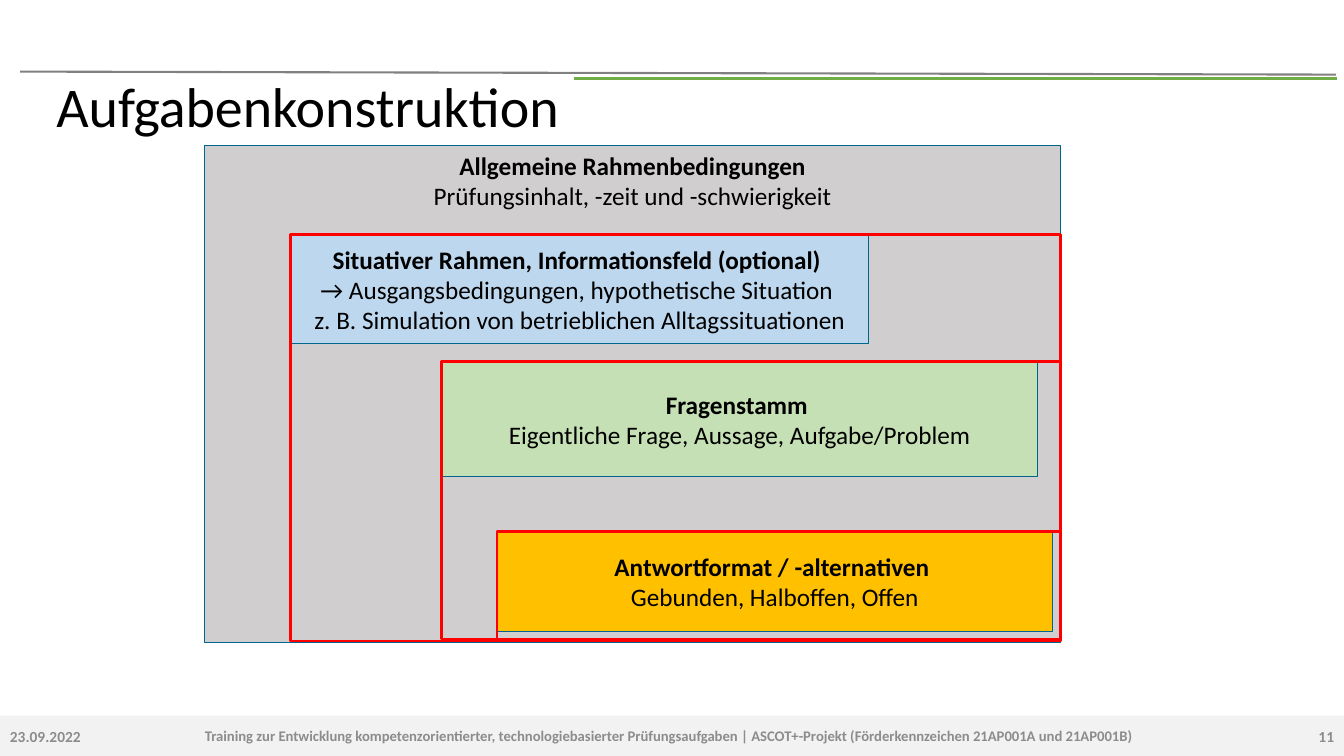
import pptx
import pptx.util
import pptx.dml.color
import pptx.enum.shapes
import pptx.enum.text
import pptx.oxml.ns
from lxml import etree

RGB = pptx.dml.color.RGBColor
BLACK = RGB(0x00, 0x00, 0x00)
GREY = RGB(0x80, 0x80, 0x80)
MUTED = RGB(0x8C, 0x8C, 0x8C)
PALE = RGB(0xF2, 0xF2, 0xF2)
STONE = RGB(0xD0, 0xCE, 0xCE)
GREEN = RGB(0x70, 0xAD, 0x47)
MINT = RGB(0xC5, 0xE0, 0xB4)
SKY = RGB(0xBD, 0xD7, 0xEE)
AMBER = RGB(0xFF, 0xC0, 0x00)
TEAL = RGB(0x00, 0x64, 0x8C)
RED = RGB(0xFF, 0x00, 0x00)

ALIGN = pptx.enum.text.PP_ALIGN
ANCHOR = pptx.enum.text.MSO_ANCHOR
RECT = pptx.enum.shapes.MSO_SHAPE.RECTANGLE
STRAIGHT = pptx.enum.shapes.MSO_CONNECTOR.STRAIGHT


class Page:
    """Current slide and its style; every place is in percent of the slide."""

    font = "Calibri"

    def __init__(self, deck):
        self.deck = deck
        self.slide = deck.slides.add_slide(deck.slide_layouts[6])

    def place(self, left, top, width, height):
        wide, high = self.deck.slide_width, self.deck.slide_height
        return [round(share * side / 100) for share, side in
                zip((left, top, width, height), (wide, high, wide, high))]

    def rect(self, area, fill=None, edge=None, weight=0.75):
        shape = self.slide.shapes.add_shape(RECT, *self.place(*area))
        shape.shadow.inherit = False
        if fill is None:
            shape.fill.background()
        else:
            shape.fill.solid()
            shape.fill.fore_color.rgb = fill
        if edge is None:
            shape.line.fill.background()
        else:
            shape.line.color.rgb = edge
            shape.line.width = pptx.util.Pt(weight)
        return shape

    def rule(self, start, end, color, weight):
        line = self.slide.shapes.add_connector(STRAIGHT, *self.place(*start, *end))
        line.line.color.rgb = color
        line.line.width = pptx.util.Pt(weight)
        etree.SubElement(line._element.spPr, pptx.oxml.ns.qn("a:effectLst"))

    def letter(self, shape, text, size, color=BLACK, align=ALIGN.CENTER, anchor=ANCHOR.MIDDLE):
        """Fill the shape with text and return its runs."""
        frame = shape.text_frame
        frame.word_wrap = True
        frame.vertical_anchor = anchor
        frame.text = text
        runs = [run for para in frame.paragraphs for run in para.runs]
        for para in frame.paragraphs:
            para.alignment = align
        for run in runs:
            run.font.name = self.font
            run.font.size = pptx.util.Pt(size)
            run.font.color.rgb = color
        return runs

    def label(self, area, text, size, color=BLACK, align=ALIGN.LEFT, bold=False):
        box = self.slide.shapes.add_textbox(*self.place(*area))
        for run in self.letter(box, text, size, color, align):
            run.font.bold = bold
        return box

    def card(self, area, text, fill, anchor=ANCHOR.MIDDLE):
        """Filled box whose first line is bold."""
        shape = self.rect(area, fill, TEAL)
        for order, run in enumerate(self.letter(shape, text, 18, anchor=anchor)):
            run.font.bold = order == 0


def main():
    deck = pptx.Presentation()
    deck.slide_width = pptx.util.Inches(13.33)
    deck.slide_height = pptx.util.Inches(7.5)
    page = Page(deck)

    foot, depth = 94.67, 5.33
    page.rect((0, foot, 100, depth), PALE)
    page.rule((1.5, 9.47), (99.4, 9.87), GREY, 1.5)
    page.rule((42.69, 10.4), (99.47, 10.4), GREEN, 2.25)

    page.card((15.23, 19.2, 63.69, 65.73),
              "Allgemeine Rahmenbedingungen\nPrüfungsinhalt, -zeit und -schwierigkeit",
              STONE, ANCHOR.TOP)
    title = page.label((3.45, 10.53, 91.52, 7.87), "Aufgabenkonstruktion", 40)
    title.text_frame.paragraphs[0].line_spacing = 0.9

    cards = [
        ((36.98, 70.13, 41.34, 13.47), AMBER,
         "Antwortformat / -alternativen \vGebunden, Halboffen, Offen"),
        ((32.86, 47.87, 44.34, 15.2), MINT,
         "Fragenstamm \vEigentliche Frage, Aussage, Aufgabe/Problem"),
        ((21.68, 31.07, 42.91, 14.4), SKY,
         "Situativer Rahmen, Informationsfeld (optional) \v"
         "→ Ausgangsbedingungen, hypothetische Situation \v"
         "z. B. Simulation von betrieblichen Alltagssituationen"),
    ]
    for area, fill, text in cards:
        page.card(area, text, fill)

    right = 78.92
    for left, top, base in ((21.61, 31.07, 84.8), (36.98, 70.27, 84.67), (32.86, 47.87, 84.53)):
        page.rect((left, top, right - left, base - top), edge=RED, weight=2)

    notes = [
        (0, 12.75, "23.09.2022", 11, ALIGN.LEFT),
        (12.75, 74.04, "Training zur Entwicklung kompetenzorientierter, technologiebasierter "
         "Prüfungsaufgaben | ASCOT+-Projekt (Förderkennzeichen 21AP001A und 21AP001B)",
         10.5, ALIGN.CENTER),
        (87.7, 12.3, "11", 11, ALIGN.RIGHT),
    ]
    for left, width, text, size, align in notes:
        page.label((left, foot, width, depth), text, size, MUTED, align, True)

    deck.save("out.pptx")


if __name__ == "__main__":
    main()
